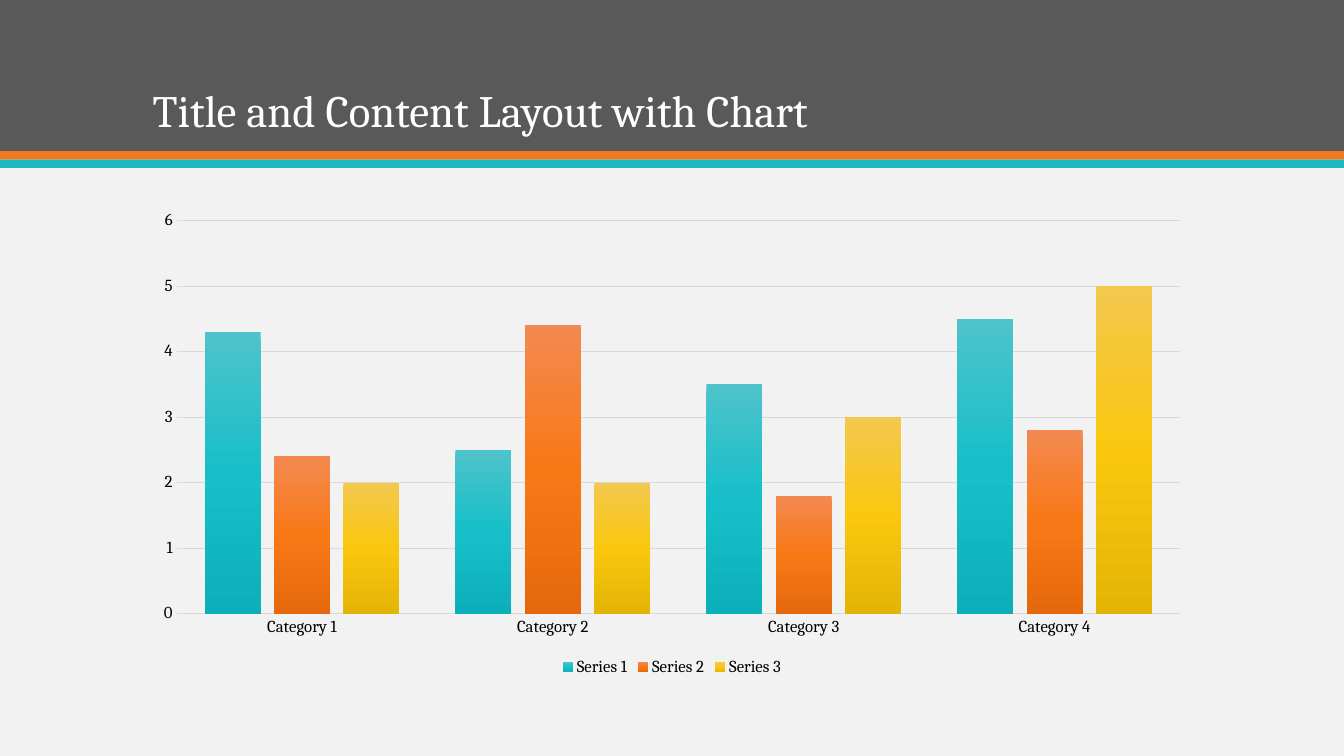
from dataclasses import dataclass
from lxml.etree import SubElement as Sub
from pptx import Presentation
from pptx.chart.data import CategoryChartData as Data
from pptx.dml.color import RGBColor as RGB
from pptx.enum.chart import XL_CHART_TYPE as Kind, XL_LEGEND_POSITION as Spot
from pptx.enum.chart import XL_TICK_MARK as Tick
from pptx.enum.shapes import MSO_SHAPE as Form
from pptx.enum.text import MSO_ANCHOR as Anchor
from pptx.oxml.ns import qn
from pptx.util import Inches, Pt


@dataclass(frozen=True)
class Theme:
    font: str = "Cambria"
    back: str = "F2F2F2"
    band: str = "595959"
    stripes: tuple = ("EF7920", "1EB8C1")
    title: str = "FFFFFF"
    text: str = "000000"
    rule: str = "D9D9D9"
    head: int = 32
    label: int = 12
    line: float = 0.75
    bars: tuple = (
        ("4EC3CB", "16BFC9", "0CB0BA"),
        ("F38950", "F97816", "E5690C"),
        ("F3C84E", "FAC70E", "E5B506"),
    )


THEME = Theme()
COLS, ROWS = 160, 90
UNIT = Inches(1) / 12
GROUPS = [f"Category {n}" for n in range(1, 5)]
VALUES = [(4.3, 2.5, 3.5, 4.5), (2.4, 4.4, 1.8, 2.8), (2, 2, 3, 5)]


def grid(*cells):
    """Turn columns and rows into lengths."""
    return [round(c * UNIT) for c in cells]


def put(obj, form):
    for name, value in form.items():
        setattr(obj, name, value)


def style(font, size, tint):
    put(font, {"name": THEME.font, "size": Pt(size)})
    font.color.rgb = RGB.from_string(tint)


def rule(line):
    line.width = Pt(THEME.line)
    line.color.rgb = RGB.from_string(THEME.rule)


def block(slide, box, tint):
    shape = slide.shapes.add_shape(Form.RECTANGLE, *grid(*box))
    shape.shadow.inherit = False
    shape.fill.solid()
    shape.fill.fore_color.rgb = RGB.from_string(tint)
    shape.line.fill.background()


def header(slide, box, text):
    """Draw the band, its stripes below and the title inside."""
    x, y, w, h = box
    block(slide, box, THEME.band)
    for i, tint in enumerate(THEME.stripes):
        block(slide, (x, y + h + i, w, 1), tint)
    frame = slide.shapes.add_textbox(
        *grid(x + 17, y + 3.4, w - 34, h - 4.5)).text_frame
    put(frame, {"word_wrap": True, "vertical_anchor": Anchor.BOTTOM})
    para = frame.paragraphs[0]
    put(para, {"text": text, "line_spacing": 0.9})
    style(para.runs[0].font, THEME.head, THEME.title)


def shade(bar, tints):
    """Fill a series from top to bottom through evenly spaced tints."""
    fill = bar.format.fill
    fill.gradient()
    fill.gradient_angle = 270
    stops = bar.format.fill.gradient_stops
    first = bar._element.find(".//" + qn("a:gsLst"))
    for old in list(first):
        first.remove(old)
    for i, tint in enumerate(tints):
        stop = Sub(first, qn("a:gs"), pos=str(i * 100000 // (len(tints) - 1)))
        Sub(stop, qn("a:srgbClr"), val=tint)


def columns(slide, box):
    data = Data()
    data.categories = GROUPS
    for n, row in enumerate(VALUES, 1):
        data.add_series(f"Series {n}", row)
    chart = slide.shapes.add_chart(
        Kind.COLUMN_CLUSTERED, *grid(*box), data).chart
    style(chart.font, THEME.label, THEME.text)
    put(chart, {"has_title": False, "has_legend": True})
    put(chart.legend, {"position": Spot.BOTTOM, "include_in_layout": False})
    style(chart.legend.font, THEME.label, THEME.text)

    cat, val = chart.category_axis, chart.value_axis
    for axis in (cat, val):
        put(axis, {"major_tick_mark": Tick.NONE, "minor_tick_mark": Tick.NONE})
        style(axis.tick_labels.font, THEME.label, THEME.text)
    put(val, {"minimum_scale": 0, "maximum_scale": 6, "major_unit": 1})
    rule(cat.format.line)
    rule(val.major_gridlines.format.line)
    val.format.line.fill.background()

    plot = chart.plots[0]
    put(plot, {"gap_width": 100, "overlap": -24, "vary_by_categories": False})
    for bar, tints in zip(plot.series, THEME.bars):
        bar.invert_if_negative = False
        shade(bar, tints)


def main():
    deck = Presentation()
    wide, high = grid(COLS, ROWS)
    put(deck, {"slide_width": wide, "slide_height": high})
    slide = deck.slides.add_slide(deck.slide_layouts[6])
    fill = slide.background.fill
    fill.solid()
    fill.fore_color.rgb = RGB.from_string(THEME.back)
    header(slide, (0, 0, COLS, 18), "Title and Content Layout with Chart")
    columns(slide, (17, 24, COLS - 34, 57))
    deck.save("out.pptx")


if __name__ == "__main__":
    main()
